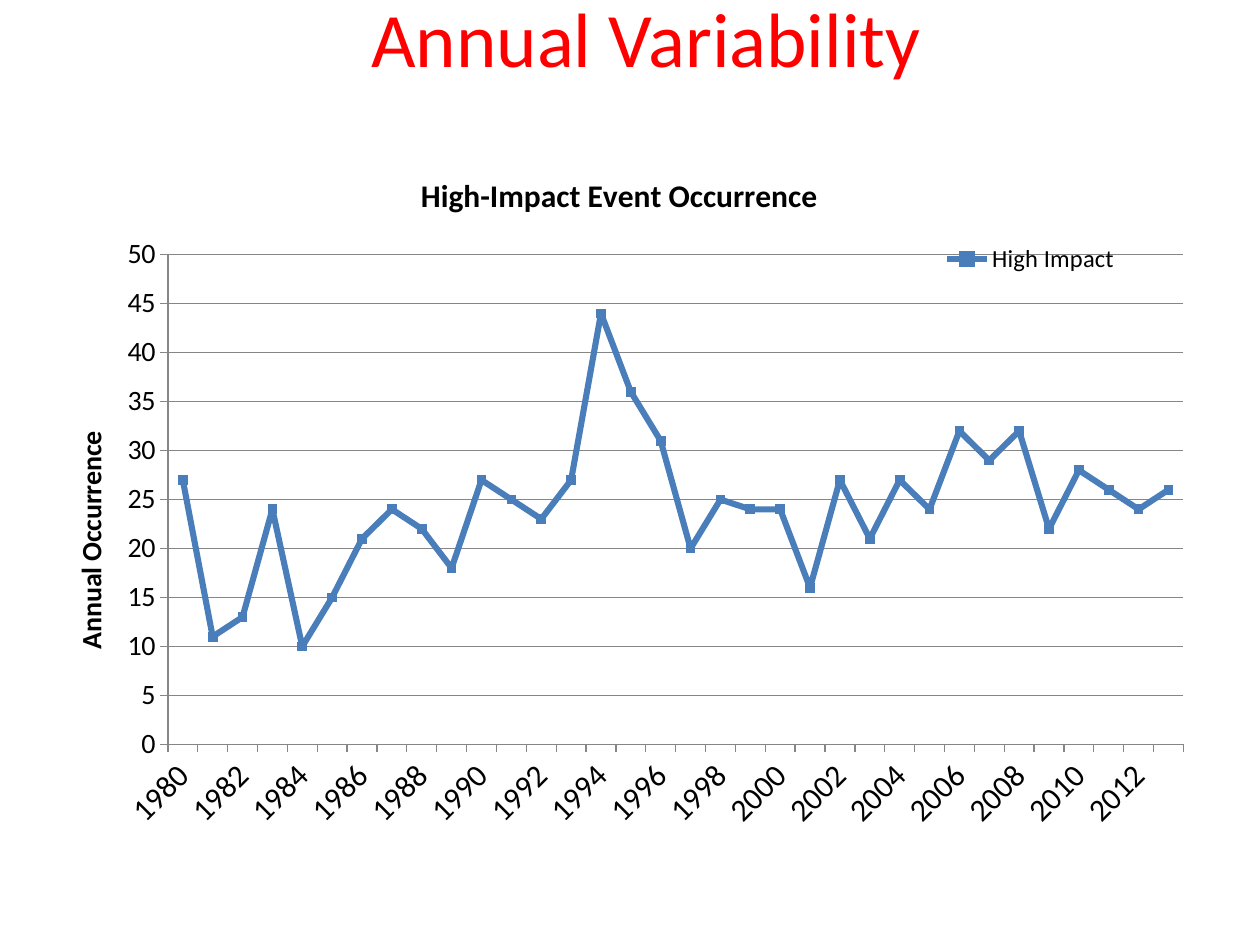
from dataclasses import dataclass

from lxml import etree
from pptx import Presentation
from pptx.chart.data import CategoryChartData
from pptx.dml.color import RGBColor
from pptx.enum.chart import XL_CHART_TYPE, XL_LEGEND_POSITION, XL_MARKER_STYLE, XL_TICK_MARK
from pptx.enum.text import MSO_ANCHOR, PP_ALIGN
from pptx.oxml.ns import qn
from pptx.util import Inches, Pt

LINE_MARKERS = XL_CHART_TYPE.LINE_MARKERS
RIGHT = XL_LEGEND_POSITION.RIGHT
SQUARE = XL_MARKER_STYLE.SQUARE
OUTSIDE = XL_TICK_MARK.OUTSIDE
MIDDLE = MSO_ANCHOR.MIDDLE
CENTER = PP_ALIGN.CENTER
TITLE_ONLY = 5


@dataclass(frozen=True)
class Theme:
    font: str = "Calibri"
    heading: str = "FF0000"
    text: str = "000000"
    series: str = "4F81BD"
    line: str = "4A7EBB"
    axis: str = "868686"
    heading_size: int = 44
    chart_title_size: int = 18
    axis_title_size: int = 16
    year_size: int = 18
    value_size: int = 16
    legend_size: int = 14
    base_size: int = 10


THEME = Theme()
FIRST_YEAR = 1980
OCCURRENCES = (
    27, 11, 13, 24, 10, 15, 21, 24, 22, 18, 27, 25, 23, 27, 44, 36, 31,
    20, 25, 24, 24, 16, 27, 21, 27, 24, 32, 29, 32, 22, 28, 26, 24, 26,
)


def style_font(font, size, color=THEME.text, bold=False):
    font.name = THEME.font
    font.size = Pt(size)
    font.bold = bold
    font.color.rgb = RGBColor.from_string(color)


def write(tf, text, size, **style):
    p = tf.paragraphs[0]
    p.alignment = CENTER
    r = p.add_run()
    r.text = text
    style_font(r.font, size, **style)


def set_layout(parent, index, **shares):
    """Place a chart part by shares of the chart's size."""
    for old in parent.findall(qn("c:layout")):
        parent.remove(old)
    layout = etree.Element(qn("c:layout"))
    manual = etree.SubElement(layout, qn("c:manualLayout"))
    if "inner" in shares:
        etree.SubElement(manual, qn("c:layoutTarget")).set("val", "inner")
    for mode in ("xMode", "yMode"):
        etree.SubElement(manual, qn(f"c:{mode}")).set("val", "edge")
    for key in ("x", "y", "w", "h"):
        if key in shares:
            etree.SubElement(manual, qn(f"c:{key}")).set("val", str(shares[key]))
    parent.insert(index, layout)


def style_line(line, color, width):
    line.color.rgb = RGBColor.from_string(color)
    line.width = Pt(width)


def style_axis(axis, size):
    axis.major_tick_mark = OUTSIDE
    style_line(axis.format.line, THEME.axis, 0.75)
    style_font(axis.tick_labels.font, size)


def add_occurrence_chart(s):
    data = CategoryChartData()
    data.categories = range(FIRST_YEAR, FIRST_YEAR + len(OCCURRENCES))
    data.add_series("High Impact", OCCURRENCES)
    chart = s.shapes.add_chart(
        LINE_MARKERS, Inches(0.25), Inches(1.17), Inches(9.33), Inches(5.53), data
    ).chart
    style_font(chart.font, THEME.base_size)
    write(chart.chart_title.text_frame, "High-Impact Event Occurrence",
          THEME.chart_title_size, bold=True)

    years, values = chart.category_axis, chart.value_axis
    style_axis(years, THEME.year_size)
    years.tick_labels.font._element.getparent().getparent().getparent().find(
        qn("a:bodyPr")).set("rot", "-2700000")
    style_axis(values, THEME.value_size)
    values.minimum_scale, values.maximum_scale, values.major_unit = 0, 50, 5
    style_line(values.major_gridlines.format.line, THEME.axis, 0.75)
    write(values.axis_title.text_frame, "Annual Occurrence",
          THEME.axis_title_size, bold=True)
    values.axis_title.text_frame._txBody.find(qn("a:bodyPr")).set("rot", "-5400000")

    chart.has_legend = True
    legend = chart.legend
    legend.position = RIGHT
    legend.include_in_layout = True
    style_font(legend.font, THEME.legend_size)

    plot = chart.plots[0]
    plot.vary_by_categories = False
    series = plot.series[0]
    series.smooth = False
    style_line(series.format.line, THEME.line, 3.5)
    marker = series.marker
    marker.style = SQUARE
    marker.size = 5
    marker.format.fill.solid()
    marker.format.fill.fore_color.rgb = RGBColor.from_string(THEME.series)
    style_line(marker.format.line, THEME.line, 0.75)

    plot_area = chart._chartSpace.find(f".//{qn('c:plotArea')}")
    set_layout(plot_area, 0, inner=True, x=0.116, y=0.154, w=0.864, h=0.703)
    set_layout(legend._element, 1, x=0.77, y=0.13, w=0.16, h=0.06)
    set_layout(values.axis_title._element, 1, x=0.03, y=0.4)


def main():
    prs = Presentation()
    prs.slide_width, prs.slide_height = Inches(10), Inches(7.5)
    s = prs.slides.add_slide(prs.slide_layouts[TITLE_ONLY])
    title = s.shapes.title
    title.left, title.top = Inches(1.17), Inches(-0.33)
    title.width, title.height = Inches(7.92), Inches(1.25)
    title.text_frame.vertical_anchor = MIDDLE
    write(title.text_frame, "Annual Variability", THEME.heading_size, color=THEME.heading)
    add_occurrence_chart(s)
    prs.save("out.pptx")


if __name__ == "__main__":
    main()
